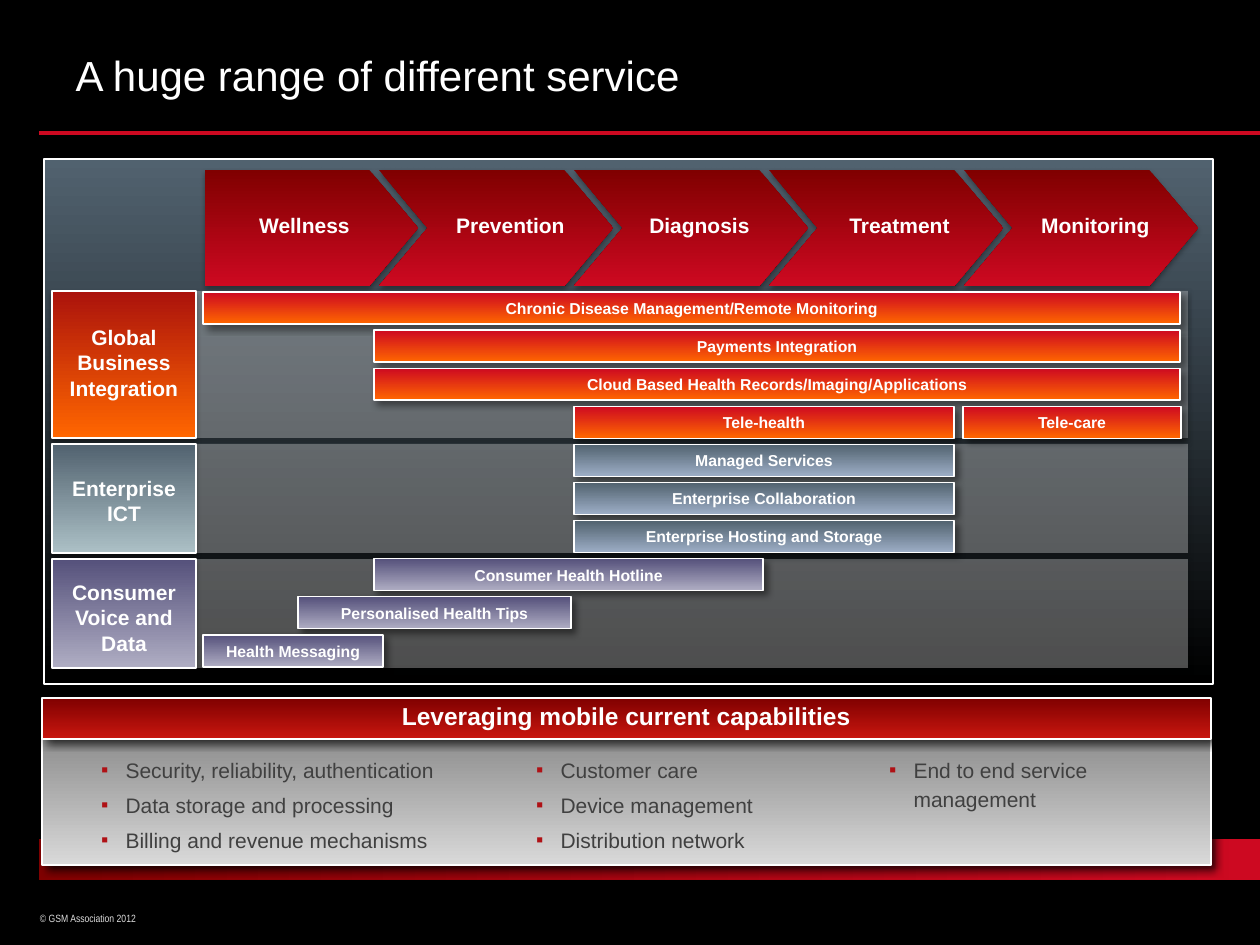
from lxml.etree import SubElement
from pptx import Presentation
from pptx.dml.color import RGBColor
from pptx.enum.shapes import MSO_CONNECTOR, MSO_SHAPE
from pptx.enum.text import MSO_ANCHOR, MSO_AUTO_SIZE, PP_ALIGN
from pptx.oxml.ns import qn
from pptx.util import Pt

PX = 914400 / 126
COLORS = {
    "black": "000000", "white": "FFFFFF", "red": "CD0921", "maroon": "800000",
    "header_red": "C9170F", "brick": "AB130C", "orange": "FF6600",
    "slate": "51626F", "blue_grey": "9DAEC6", "pale_teal": "ACC0C6",
    "violet": "55517B", "lilac": "AFADC3", "mid_grey": "7F7F7F",
    "light_grey": "D9D9D9", "copyright": "DDDDDD", "list_text": "404040",
    "bullet": "AF1115",
}
# Opacity in percent, blur and distance in points, direction in degrees
SOFT = (35, 3.1, 1.8, 90)
BAR = (43, 4, 3, 45)
STRONG = (75, 5, 3, 45)

deck = Presentation()
deck.slide_width, deck.slide_height = round(1260 * PX), round(945 * PX)
slide = deck.slides.add_slide(deck.slide_layouts[4])
slide.background.fill.solid()
slide.background.fill.fore_color.rgb = RGBColor.from_string(COLORS["black"])


def add_block(kind, bounds, colors, shadow, outlined=True, angle=270):
    """Add a shape with a one- or two-colour fill and an outer shadow."""
    shape = slide.shapes.add_shape(kind, *(round(v * PX) for v in bounds))
    if len(colors) == 1:
        shape.fill.solid()
        shape.fill.fore_color.rgb = RGBColor.from_string(COLORS[colors[0]])
    else:
        shape.fill.gradient()
        shape.fill.gradient_angle = angle
        for stop, name in zip(shape.fill.gradient_stops, colors):
            stop.color.rgb = RGBColor.from_string(COLORS[name])
    if outlined:
        shape.line.color.rgb = RGBColor.from_string(COLORS["white"])
        shape.line.width = Pt(0.75)
    else:
        shape.line.fill.background()
    shape.shadow.inherit = False
    opacity, blur, distance, direction = shadow
    effects = shape.element.spPr.find(qn("a:effectLst"))
    outer = SubElement(effects, qn("a:outerShdw"), blurRad=str(Pt(blur)),
                       dist=str(Pt(distance)), dir=str(direction * 60000),
                       algn="ctr", rotWithShape="0")
    tint = SubElement(outer, qn("a:srgbClr"), val=COLORS["black"])
    SubElement(tint, qn("a:alpha"), val=str(opacity * 1000))
    return shape


def write(box, text, size, color="white", bold=False, align=PP_ALIGN.LEFT,
          anchor=MSO_ANCHOR.MIDDLE, font="Arial"):
    frame = box.text_frame
    frame.text = text
    frame.word_wrap = True
    frame.auto_size = MSO_AUTO_SIZE.NONE
    frame.vertical_anchor = anchor
    for para in frame.paragraphs:
        para.alignment = align
        for span in para.runs:
            span.font.size = Pt(size)
            span.font.name = font
            span.font.bold = bold
            span.font.color.rgb = RGBColor.from_string(COLORS[color])


# Page frame
box = slide.shapes.add_textbox(*(round(v * PX) for v in (39, 906, 197, 25)))
write(box, "© GSM Association 2012", 6, "copyright", font="Arial Narrow")
box.text_frame.margin_left = round(1 * PX)
add_block(MSO_SHAPE.RECTANGLE, (39, 839, 1221, 41), ("maroon", "red"), SOFT,
          outlined=False, angle=0)
rule = slide.shapes.add_connector(
    MSO_CONNECTOR.STRAIGHT, *(round(v * PX) for v in (39, 133, 1260, 133)))
rule.line.color.rgb = RGBColor.from_string(COLORS["red"])
rule.line.width = Pt(2.25)
SubElement(rule.element.spPr, qn("a:effectLst"))

title = slide.shapes.title
title.left, title.top, title.width, title.height = (
    round(v * PX) for v in (63, 38, 1134, 96))
write(title, "A huge range of different service", 24, anchor=MSO_ANCHOR.TOP)
title.text_frame.margin_top = round(11 * PX)

# Panels behind the service chart and the capabilities
add_block(MSO_SHAPE.RECTANGLE, (42, 714, 1169, 151),
          ("mid_grey", "light_grey"), STRONG)
add_block(MSO_SHAPE.RECTANGLE, (44, 159, 1169, 525), ("slate", "black"), STRONG)

# Tiers: label, top, height, label top, label height, colours
tiers = [
    ("Global\vBusiness\vIntegration", 291, 147, 318, 89, ("brick", "orange")),
    ("Enterprise\vICT", 444, 109, 469, 63, ("slate", "pale_teal")),
    ("Consumer\vVoice and\vData", 559, 109, 573, 89, ("violet", "lilac")),
]
for label, top, height, *rest in tiers:
    band = add_block(MSO_SHAPE.RECTANGLE, (52, top, 1136, height), ("white",),
                     SOFT, outlined=False)
    tint = band.element.spPr.find(qn("a:solidFill"))[0]
    SubElement(tint, qn("a:alpha"), val="30000")

# Care stages: name and left edge of its label
stages = [("Wellness", 203), ("Prevention", 409), ("Diagnosis", 598),
          ("Treatment", 798), ("Monitoring", 994)]
for index, (name, label_left) in enumerate(stages):
    if index == 0:
        kind, left, width = MSO_SHAPE.PENTAGON, 205, 213
    else:
        kind, left, width = MSO_SHAPE.CHEVRON, 184 + 195 * index, 234
    arrow = add_block(kind, (left, 170, width, 116), ("maroon", "red"), SOFT,
                      outlined=False)
    arrow.adjustments[0] = 0.42
for name, label_left in stages:
    box = slide.shapes.add_textbox(
        *(round(v * PX) for v in (label_left, 206, 203, 38)))
    write(box, name, 12, bold=True, align=PP_ALIGN.CENTER)

# Service bars: name, row, left, width, colours
hot, cool, soft_violet = ("red", "orange"), ("slate", "blue_grey"), ("violet", "lilac")
services = [
    ("Chronic Disease Management/Remote Monitoring", 0, 203, 977, hot),
    ("Payments Integration", 1, 374, 806, hot),
    ("Cloud Based Health Records/Imaging/Applications", 2, 374, 806, hot),
    ("Tele-health", 3, 574, 380, hot),
    ("Tele-care", 3, 963, 218, hot),
    ("Managed Services", 4, 574, 380, cool),
    ("Enterprise Collaboration", 5, 574, 380, cool),
    ("Enterprise Hosting and Storage", 6, 574, 380, cool),
    ("Consumer Health Hotline", 7, 374, 389, soft_violet),
    ("Personalised Health Tips", 8, 298, 273, soft_violet),
    ("Health Messaging", 9, 203, 180, soft_violet),
]
for name, row, left, width, colors in services:
    bar = add_block(MSO_SHAPE.RECTANGLE, (left, 292 + 38.1 * row, width, 32),
                    colors, BAR)
    write(bar, name, 9, bold=True, align=PP_ALIGN.CENTER)

for label, top, height, label_top, label_height, colors in tiers:
    add_block(MSO_SHAPE.RECTANGLE, (52, top, 144, height), colors, SOFT)
    box = slide.shapes.add_textbox(
        *(round(v * PX) for v in (52, label_top, 144, label_height)))
    write(box, label, 12, bold=True, align=PP_ALIGN.CENTER)
    box.text_frame.margin_left = box.text_frame.margin_right = 0

# Capabilities
header = add_block(MSO_SHAPE.RECTANGLE, (42, 698, 1169, 41),
                   ("maroon", "header_red"), STRONG)
write(header, "Leveraging mobile current capabilities", 14, bold=True,
      align=PP_ALIGN.CENTER)
header.text_frame.margin_top = 0
header.text_frame.margin_bottom = round(6 * PX)

capabilities = [
    (39, 435, ["Security, reliability, authentication",
               "Data storage and processing", "Billing and revenue mechanisms"]),
    (474, 353, ["Customer care", "Device management", "Distribution network"]),
    (827, 384, ["End to end service\vmanagement"]),
]
*bodies, spare = list(slide.placeholders)[1:5]
for body, (left, width, items) in zip(bodies, capabilities):
    body.left, body.top, body.width, body.height = (
        round(v * PX) for v in (left, 747, width, 115))
    write(body, "\n".join(items), 12, "list_text", anchor=MSO_ANCHOR.TOP)
    for index, para in enumerate(body.text_frame.paragraphs):
        para.line_spacing = 1.15
        para.space_before = Pt(3.6 if index else 0)
        props = para._p.get_or_add_pPr()
        props.set("marL", str(round(74 * PX)))
        props.set("indent", str(round(-24 * PX)))
        bullet_color = SubElement(props, qn("a:buClr"))
        SubElement(bullet_color, qn("a:srgbClr"), val=COLORS["bullet"])
        SubElement(props, qn("a:buSzPct"), val="50000")
        SubElement(props, qn("a:buFont"), typeface="Arial")
        SubElement(props, qn("a:buChar"), char="■")
    slide.shapes.element.append(body.element)  # bring in front of its panel
spare.element.getparent().remove(spare.element)

deck.save("out.pptx")
